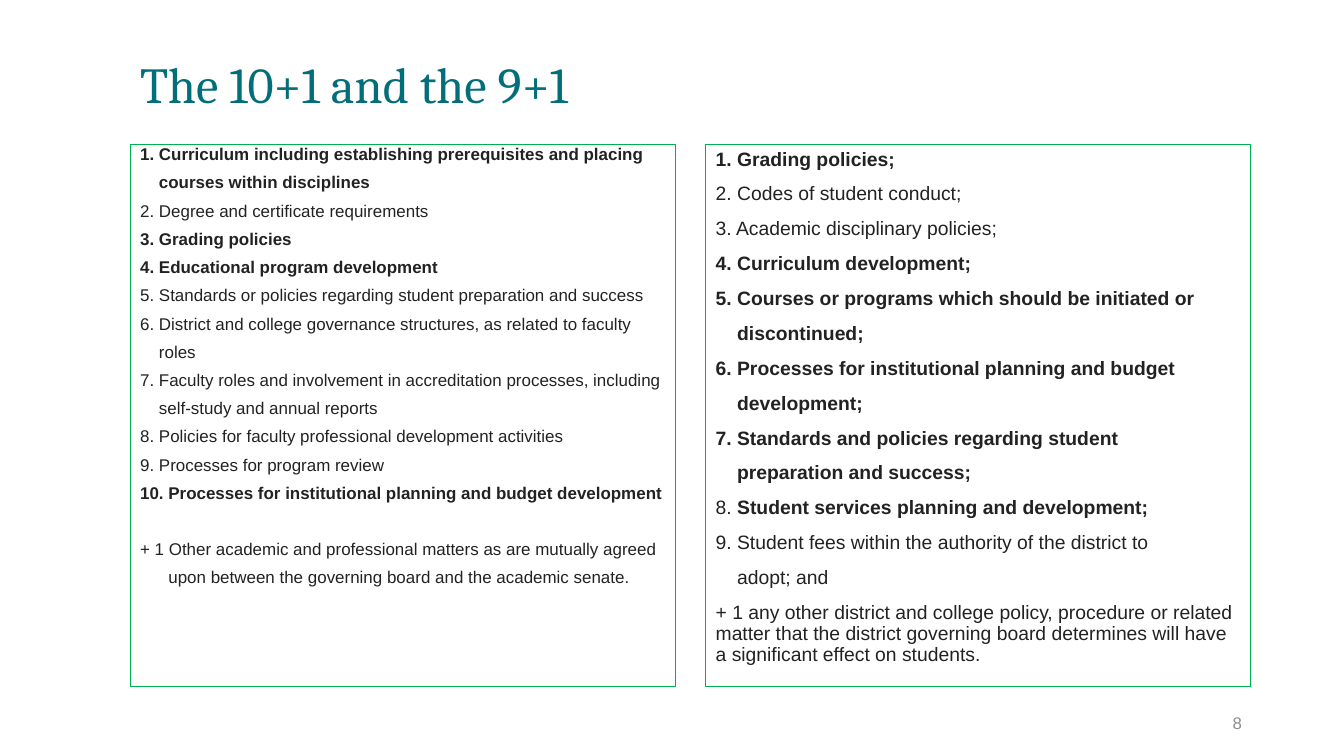
"""Build the slide that compares the 10+1 and the 9+1 lists."""
from dataclasses import dataclass

from lxml.etree import SubElement
from pptx import Presentation
from pptx.dml.color import RGBColor as Color
from pptx.enum.text import MSO_ANCHOR as Anchor, MSO_AUTO_SIZE as Fit, PP_ALIGN as Align
from pptx.oxml.ns import qn
from pptx.util import Pt


@dataclass(frozen=True)
class Theme:
    head: str = "Cambria"
    body: str = "Arial"
    teal: str = "016E79"
    ink: str = "222222"
    green: str = "00B050"
    gray: str = "8D8D8D"
    title: float = 36
    left: float = 12.1
    right: float = 13.8
    num: float = 12
    gap: float = 10


@dataclass(frozen=True)
class Item:
    lines: tuple
    bold: bool = False
    lead: str = ""
    inset: float = 4
    gap: float = Theme.gap


THEME = Theme()
SPACE = 0.278

TEN = [
    Item(("1. Curriculum including establishing prerequisites and placing",
          "courses within disciplines"), True),
    Item(("2. Degree and certificate requirements",)),
    Item(("3. Grading policies",), True),
    Item(("4. Educational program development",), True),
    Item(("5. Standards or policies regarding student preparation and success",)),
    Item(("6. District and college governance structures, as related to faculty",
          "roles")),
    Item(("7. Faculty roles and involvement in accreditation processes, including",
          "self-study and annual reports")),
    Item(("8. Policies for faculty professional development activities",)),
    Item(("9. Processes for program review",)),
    Item(("10. Processes for institutional planning and budget development",), True),
    Item(("+ 1 Other academic and professional matters as are mutually agreed",
          "upon between the governing board and the academic senate."),
         inset=6, gap=30),
]

NINE = [
    Item(("1. Grading policies;",), True),
    Item(("2. Codes of student conduct;",)),
    Item(("3. Academic disciplinary policies;",)),
    Item(("4. Curriculum development;",), True),
    Item(("5. Courses or programs which should be initiated or",
          "discontinued;"), True),
    Item(("6. Processes for institutional planning and budget",
          "development;"), True),
    Item(("7. Standards and policies regarding student",
          "preparation and success;"), True),
    Item(("Student services planning and development;",), True, lead="8. "),
    Item(("9. Student fees within the authority of the district to",
          "adopt; and")),
    Item(("+ 1 any other district and college policy, procedure or related matter "
          "that the district governing board determines will have a significant "
          "effect on students.",)),
]


def place(shape, left, top, width, height):
    """Move and size a shape, in points."""
    shape.left, shape.top = Pt(left), Pt(top)
    shape.width, shape.height = Pt(width), Pt(height)


def add_run(para, text, face, size, color, bold=False):
    """Add one formatted run to a paragraph."""
    run = para.add_run()
    run.text = text
    font = run.font
    font.name, font.size, font.bold = face, Pt(size), bold
    font.color.rgb = Color.from_string(color)


def set_frame(shape, anchor):
    """Give a shape wrapped text of fixed size and return its frame."""
    frame = shape.text_frame
    frame.word_wrap = True
    frame.auto_size = Fit.NONE
    frame.vertical_anchor = anchor
    return frame


def add_title(slide, text):
    """Fill the title placeholder."""
    shape = slide.shapes.title
    place(shape, 92.9, 28.8, 801.4, 104.4)
    frame = set_frame(shape, Anchor.TOP)
    frame.margin_top = Pt(14)
    para = frame.paragraphs[0]
    para.alignment = Align.LEFT
    para.line_spacing = 0.9
    add_run(para, text, THEME.head, THEME.title, THEME.teal)


def add_list(shape, left, items, size, pitch):
    """Fill a framed body placeholder with numbered items."""
    place(shape, left, 103.1, 389.5, 387.4)
    shape.line.color.rgb = Color.from_string(THEME.green)
    shape.line.width = Pt(0.75)
    frame = set_frame(shape, Anchor.TOP)
    rows = [(item, i, line) for item in items for i, line in enumerate(item.lines)]
    for n, (item, i, line) in enumerate(rows):
        para = frame.add_paragraph() if n else frame.paragraphs[0]
        props = para._p.get_or_add_pPr()
        inset = item.inset * SPACE * size if i else 0
        props.set("marL", str(int(Pt(inset))))
        props.set("indent", "0")
        SubElement(props, qn("a:buNone"))
        para.line_spacing = pitch
        para.space_before = Pt((THEME.gap if i else item.gap) if n else 0)
        para.space_after = Pt(0)
        if item.lead and not i:
            add_run(para, item.lead, THEME.body, size, THEME.ink)
        add_run(para, line, THEME.body, size, THEME.ink, item.bold)


def add_num(slide, text):
    """Add the page number."""
    box = slide.shapes.add_textbox(Pt(678.2), Pt(503.3), Pt(216), Pt(26))
    para = set_frame(box, Anchor.MIDDLE).paragraphs[0]
    para.alignment = Align.RIGHT
    add_run(para, text, THEME.body, THEME.num, THEME.gray)


def main():
    """Build and save the slide."""
    deck = Presentation()
    deck.slide_width, deck.slide_height = Pt(960), Pt(540)
    slide = deck.slides.add_slide(deck.slide_layouts[3])
    add_title(slide, "The 10+1 and the 9+1")
    add_list(slide.placeholders[1], 92.9, TEN, THEME.left, 0.7)
    add_list(slide.placeholders[2], 504, NINE, THEME.right, 0.9)
    add_num(slide, "8")
    deck.save("out.pptx")


if __name__ == "__main__":
    main()
